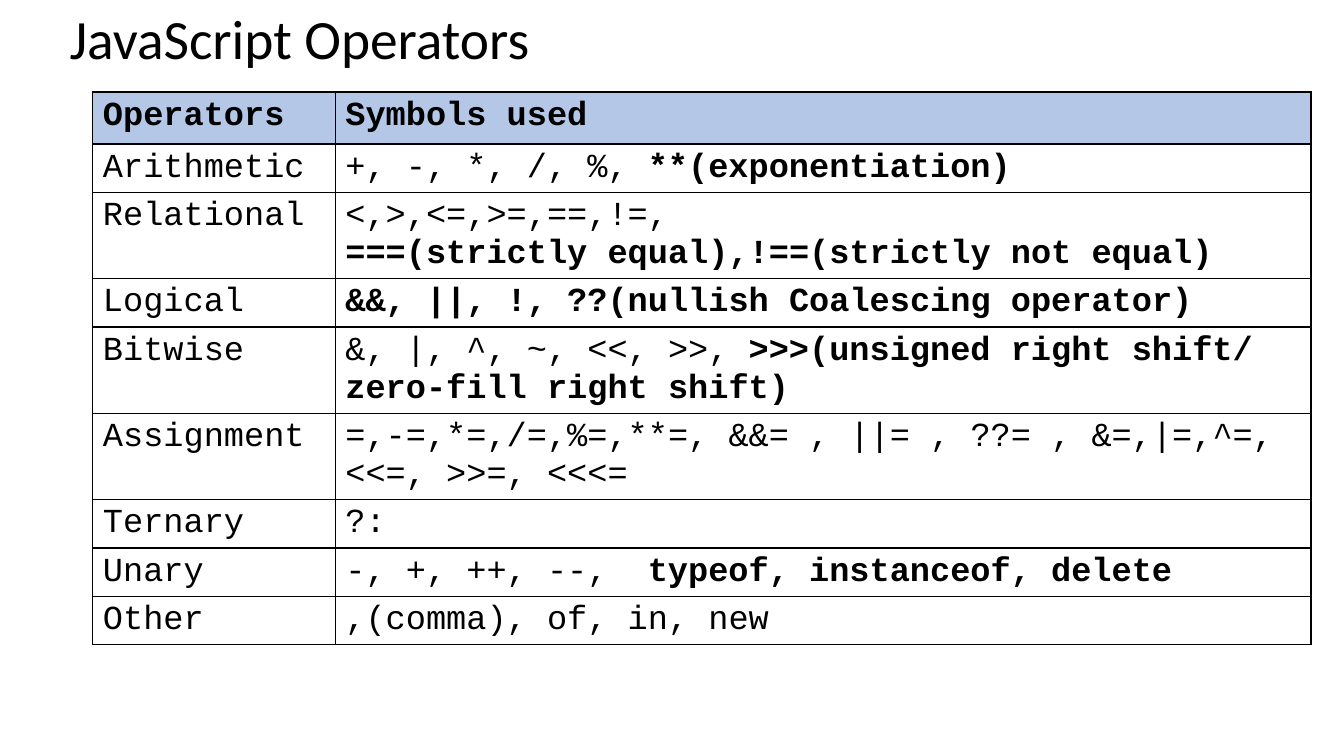
from dataclasses import dataclass
from lxml import etree
from pptx import Presentation
from pptx.dml.color import RGBColor
from pptx.enum.text import MSO_ANCHOR, MSO_AUTO_SIZE, PP_ALIGN
from pptx.oxml.ns import qn
from pptx.util import Cm, Pt

MIDDLE = MSO_ANCHOR.MIDDLE
NO_FIT = MSO_AUTO_SIZE.NONE
LEFT = PP_ALIGN.LEFT

TITLE = "JavaScript Operators"
HEAD = ("Operators", "Symbols used")
ROWS = [
    ("Arithmetic", [[("+, -, *, /, %, ", False), ("**(exponentiation)", True)]]),
    ("Relational", [
        [("<,>,<=,>=,==,!=,", False)],
        [("===(strictly equal),!==(strictly not equal)", True)],
    ]),
    ("Logical", [[("&&, ||, !, ??(nullish Coalescing operator)", True)]]),
    ("Bitwise", [[
        ("&, |, ^, ~, <<, >>, ", False),
        (">>>(unsigned right shift/ zero-fill right shift)", True),
    ]]),
    ("Assignment", [[
        ("=,-=,*=,/=,%=,**=, &&= , ||= , ??= , &=,|=,^=, <<=, >>=, <<<=", False),
    ]]),
    ("Ternary", [[("?:", False)]]),
    ("Unary", [[("-, +, ++, --,  ", False), ("typeof, instanceof, delete", True)]]),
    ("Other", [[(",(comma), of, in, new", False)]]),
]
COLS = (6.11, 24.59)
HEAD_H, ROW_H = 1.31, 1.04


@dataclass(frozen=True)
class Theme:
    ink: str = "000000"
    band: str = "B4C7E7"
    title_font: str = "Calibri"
    code_font: str = "Courier New"
    title_size: float = 39.6
    code_size: float = 24
    line: float = 1


THEME = Theme()


def add_run(para, text, font, size, bold=False):
    run = para.add_run()
    run.text = text
    run.font.name = font
    run.font.size = Pt(size)
    run.font.bold = bold
    run.font.color.rgb = RGBColor.from_string(THEME.ink)


def add_edges(cell):
    props = cell._tc.get_or_add_tcPr()
    for spot, side in enumerate(("lnL", "lnR", "lnT", "lnB")):
        edge = etree.Element(qn(f"a:{side}"), w=str(Pt(THEME.line)))
        fill = etree.SubElement(edge, qn("a:solidFill"))
        etree.SubElement(fill, qn("a:srgbClr"), val=THEME.ink)
        props.insert(spot, edge)


def fill_cell(cell, paras, band=False):
    frame = cell.text_frame
    for i, runs in enumerate(paras):
        para = frame.add_paragraph() if i else frame.paragraphs[0]
        for text, bold in runs:
            add_run(para, text, THEME.code_font, THEME.code_size, bold)
    if band:
        cell.fill.solid()
        cell.fill.fore_color.rgb = RGBColor.from_string(THEME.band)
    else:
        cell.fill.background()
    add_edges(cell)


def add_title(slide):
    title = slide.shapes.title
    title.left, title.top = Cm(1.5), Cm(0.6)
    title.width, title.height = Cm(29.2), Cm(0.9)
    frame = title.text_frame
    frame.auto_size = NO_FIT
    frame.vertical_anchor = MIDDLE
    para = frame.paragraphs[0]
    para.alignment = LEFT
    para.line_spacing = 0.9
    add_run(para, TITLE, THEME.title_font, THEME.title_size)


def add_grid(slide):
    count = len(ROWS) + 1
    height = HEAD_H + ROW_H * len(ROWS)
    grid = slide.shapes.add_table(
        count, len(COLS), Cm(2.34), Cm(2.32), Cm(sum(COLS)), Cm(height)
    ).table
    grid.horz_banding = False
    for col, width in zip(grid.columns, COLS):
        col.width = Cm(width)
    for i, row in enumerate(grid.rows):
        row.height = Cm(ROW_H if i else HEAD_H)
    for cell, text in zip(grid.rows[0].cells, HEAD):
        fill_cell(cell, [[(text, True)]], band=True)
    for i, (name, marks) in enumerate(ROWS, 1):
        fill_cell(grid.cell(i, 0), [[(name, False)]])
        fill_cell(grid.cell(i, 1), marks)


def main():
    deck = Presentation()
    deck.slide_width, deck.slide_height = Cm(33.87), Cm(19.05)
    slide = deck.slides.add_slide(deck.slide_layouts[5])
    add_title(slide)
    add_grid(slide)
    deck.save("out.pptx")


if __name__ == "__main__":
    main()
